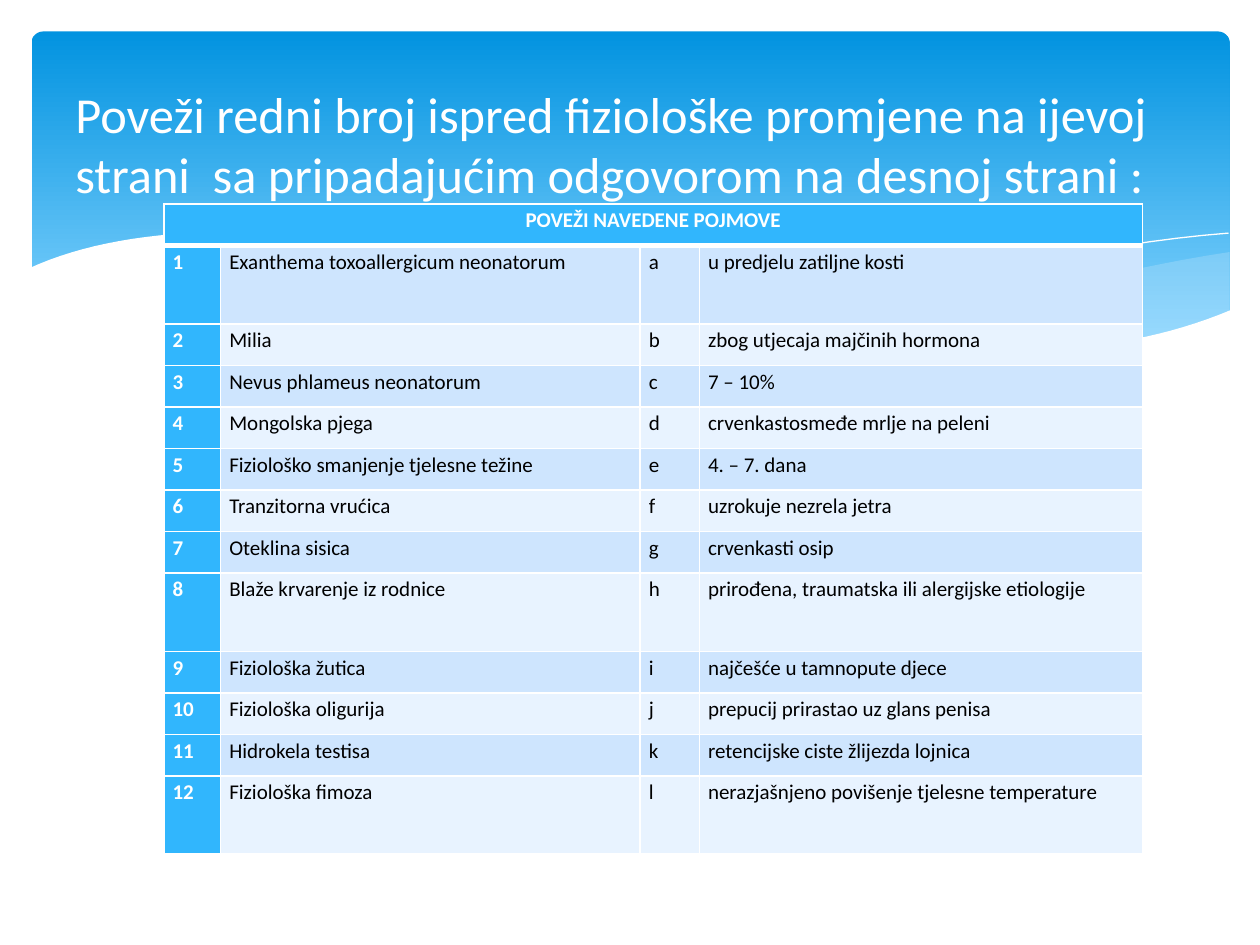
"""Build a matching-exercise slide with a wave banner and a table of terms."""
from math import comb

from lxml import etree
from pptx import Presentation
from pptx.dml.color import RGBColor
from pptx.enum.shapes import MSO_SHAPE
from pptx.enum.text import MSO_ANCHOR, PP_ALIGN
from pptx.oxml.ns import qn
from pptx.util import Inches, Pt

ROUNDED = MSO_SHAPE.ROUNDED_RECTANGLE
TOP = MSO_ANCHOR.TOP
LEFT, CENTER = PP_ALIGN.LEFT, PP_ALIGN.CENTER
FONT = "Calibri"
WHITE, BLACK, MIST = "FFFFFF", "000000", "C6E7FC"
ACCENT, BANDS = "31B6FD", ("CEE5FE", "E8F3FF")
STEPS = 16

TITLE = ("Poveži redni broj ispred fiziološke promjene na ijevoj strani  "
         "sa pripadajućim odgovorom na desnoj strani :")
HEADING = "POVEŽI NAVEDENE POJMOVE"
PAIRS = [
    ("Exanthema toxoallergicum neonatorum", "u predjelu zatiljne kosti"),
    ("Milia", "zbog utjecaja majčinih hormona"),
    ("Nevus phlameus neonatorum", "7 – 10%"),
    ("Mongolska pjega", "crvenkastosmeđe mrlje na peleni"),
    ("Fiziološko smanjenje tjelesne težine", "4. – 7. dana"),
    ("Tranzitorna vrućica", "uzrokuje nezrela jetra"),
    ("Oteklina sisica", "crvenkasti osip"),
    ("Blaže krvarenje iz rodnice", "prirođena, traumatska ili alergijske etiologije"),
    ("Fiziološka žutica", "najčešće u tamnopute djece"),
    ("Fiziološka oligurija", "prepucij prirastao uz glans penisa"),
    ("Hidrokela testisa", "retencijske ciste žlijezda lojnica"),
    ("Fiziološka fimoza", "nerazjašnjeno povišenje tjelesne temperature"),
]
COLUMN_WIDTHS = [0.45, 3.33, 0.47, 3.52]
ROW_HEIGHT, TALL_HEIGHT, TALL_ROWS = 0.33, 0.62, (1, 8, 12)


def color(value):
    """Return the colour for a hex string."""
    return RGBColor.from_string(value)


def arc(*controls):
    """Return points along the Bezier curve with the given control points."""
    degree = len(controls) - 1
    points = []
    for step in range(STEPS + 1):
        t = step / STEPS
        weights = [comb(degree, k) * t**k * (1 - t)**(degree - k) for k in range(degree + 1)]
        points.append(tuple(sum(weight * control[axis] for weight, control in zip(weights, controls))
                            for axis in (0, 1)))
    return points


def white_wave():
    """Return the wave that cuts the banner, closed along its foot."""
    left, right, foot = 0.23, 9.77, 3.29
    crest, trough = (1.85, 1.84), (8.15, 2.77)
    rise = arc((left, 2.13), (0.86, crest[1]), crest)
    fall = arc(crest, (4.14, crest[1]), (5.86, trough[1]), trough)
    lift = arc(trough, (9.03, trough[1]), (right, 2.46))
    return rise + fall + lift + [(right, foot), (left, foot)]


def middle_wave():
    """Return the thin ribbon that runs from a left tip to a right tip."""
    left_tip, right_tip = (2.86, 1.91), (8.93, 2.73)
    crest, trough = (3.7, 1.85), (8.15, 2.78)
    lower_edge = arc(left_tip, (4.4, 2.09), (6.1, trough[1]), trough)
    right_end = arc(trough, (8.6, trough[1]), right_tip)
    upper_edge = arc(right_tip, (7.6, 2.62), (5.4, crest[1]), crest)
    left_end = arc(crest, (3.2, crest[1]), left_tip)
    return lower_edge + right_end + upper_edge + left_end


def right_wave():
    """Return the swell that opens from a left tip to the right edge."""
    tip, trough, right = (6.61, 2.65), (8.1, 2.78), 9.76
    upper_edge = arc((right, 2), (8.7, 2.16), (7.7, 2.48), tip)
    fall = arc(tip, (7.5, trough[1]), trough)
    lift = arc(trough, (9, trough[1]), (right, 2.47))
    return upper_edge + fall + lift


def long_crest():
    """Return the curve that rises briefly and then falls to the right."""
    crest = (4.1, 1.87)
    rise = arc((3.09, 1.95), (3.6, crest[1]), crest)
    return rise + arc(crest, (5.76, crest[1]), (7.6, 2.3), (9.07, 2.72))


def short_crest():
    """Return the curve that climbs to the right edge."""
    return arc((6.13, 2.57), (7.3, 2.25), (8.7, 1.93), (9.75, 1.85))


class SlideBuilder:
    """Hold the style and the current slide."""

    def __init__(self, slide, font, size):
        """Keep the slide with its font and table text size."""
        self.slide, self.font, self.size = slide, font, size

    def style(self, paragraph, text, size, text_color, bold=False, align=LEFT):
        """Write and format one paragraph."""
        paragraph.text = text
        paragraph.alignment = align
        paragraph.font.name = self.font
        paragraph.font.size = Pt(size)
        paragraph.font.bold = bold
        paragraph.font.color.rgb = color(text_color)

    def banner(self, left, top, width, height, start, end):
        """Add a rounded panel with a downward gradient."""
        shape = self.slide.shapes.add_shape(
            ROUNDED, Inches(left), Inches(top), Inches(width), Inches(height))
        shape.adjustments[0] = 0.034
        shape.shadow.inherit = False
        shape.line.fill.background()
        shape.fill.gradient()
        shape.fill.gradient_angle = 270
        for stop, value, position in zip(shape.fill.gradient_stops, (start, end), (0, 0.9)):
            stop.color.rgb = color(value)
            stop.position = position

    def outline(self, points, closed):
        """Add a freeform through the given points."""
        corners = [(Inches(x), Inches(y)) for x, y in points]
        builder = self.slide.shapes.build_freeform(*corners[0])
        builder.add_line_segments(corners[1:], close=closed)
        shape = builder.convert_to_shape()
        shape.shadow.inherit = False
        return shape

    def wave(self, points, fill, opacity=100):
        """Add a filled wave of the given opacity in percent."""
        shape = self.outline(points, True)
        shape.line.fill.background()
        shape.fill.solid()
        shape.fill.fore_color.rgb = color(fill)
        if opacity < 100:
            fill_color = next(shape.element.spPr.iter(qn("a:srgbClr")))
            etree.SubElement(fill_color, qn("a:alpha"), val=str(opacity * 1000))

    def crest(self, points):
        """Add a white hairline curve."""
        shape = self.outline(points, False)
        shape.fill.background()
        shape.line.color.rgb = color(WHITE)
        shape.line.width = Pt(0)

    def border(self, cell, top, bottom):
        """Draw white borders around a cell."""
        properties = cell._tc.get_or_add_tcPr()
        for side, width in (("L", 1), ("R", 1), ("T", top), ("B", bottom)):
            line = etree.SubElement(properties, qn(f"a:ln{side}"), w=str(Pt(width)))
            fill = etree.SubElement(line, qn("a:solidFill"))
            etree.SubElement(fill, qn("a:srgbClr"), val=WHITE)

    def cell(self, cell, text, fill, accent=False, align=LEFT):
        """Fill and label one table cell."""
        cell.fill.solid()
        cell.fill.fore_color.rgb = color(fill)
        cell.margin_left = cell.margin_right = Inches(0.07)
        cell.margin_top = cell.margin_bottom = 0
        paragraph = cell.text_frame.paragraphs[0]
        self.style(paragraph, text, self.size, WHITE if accent else BLACK, accent, align)
        paragraph.line_spacing = 1.15

    def table(self, left, top, widths, heading, pairs):
        """Add the numbered terms beside the lettered answers."""
        heights = [TALL_HEIGHT if row in TALL_ROWS else ROW_HEIGHT for row in range(len(pairs) + 1)]
        table = self.slide.shapes.add_table(
            len(heights), len(widths), Inches(left), Inches(top),
            Inches(sum(widths)), Inches(sum(heights))).table
        for column, width in zip(table.columns, widths):
            column.width = Inches(width)
        for index, (row, height) in enumerate(zip(table.rows, heights)):
            row.height = Inches(height)
            for cell in row.cells:
                self.border(cell, 3 if index == 1 else 1, 3 if index == 0 else 1)
        table.cell(0, 0).merge(table.cell(0, len(widths) - 1))
        self.cell(table.cell(0, 0), heading, ACCENT, True, CENTER)
        for index, (term, answer) in enumerate(pairs):
            band = BANDS[index % 2]
            texts = (str(index + 1), term, chr(ord("a") + index), answer)
            for column, text in enumerate(texts):
                accent = column == 0
                self.cell(table.cell(index + 1, column), text, ACCENT if accent else band, accent)

    def title(self, left, top, width, height, text):
        """Add the white slide title."""
        box = self.slide.shapes.add_textbox(
            Inches(left), Inches(top), Inches(width), Inches(height))
        frame = box.text_frame
        frame.word_wrap = True
        frame.vertical_anchor = TOP
        frame.margin_top = 0
        self.style(frame.paragraphs[0], text, 28.8, WHITE)


def main():
    """Build and save the slide."""
    presentation = Presentation()
    presentation.slide_width, presentation.slide_height = Inches(10), Inches(7.5)
    slide = presentation.slides.add_slide(presentation.slide_layouts[6])
    builder = SlideBuilder(slide, FONT, 12)
    builder.banner(0.25, 0.25, 9.51, 2.7, "0293E0", "83D3FE")
    builder.wave(right_wave(), MIST, 29)
    builder.wave(middle_wave(), MIST, 40)
    builder.crest(long_crest())
    builder.crest(short_crest())
    builder.wave(white_wave(), WHITE)
    builder.table(1.3, 1.62, COLUMN_WIDTHS, HEADING, PAIRS)
    builder.title(0.5, 0.66, 9, 1.37, TITLE)
    presentation.save("out.pptx")


if __name__ == "__main__":
    main()
